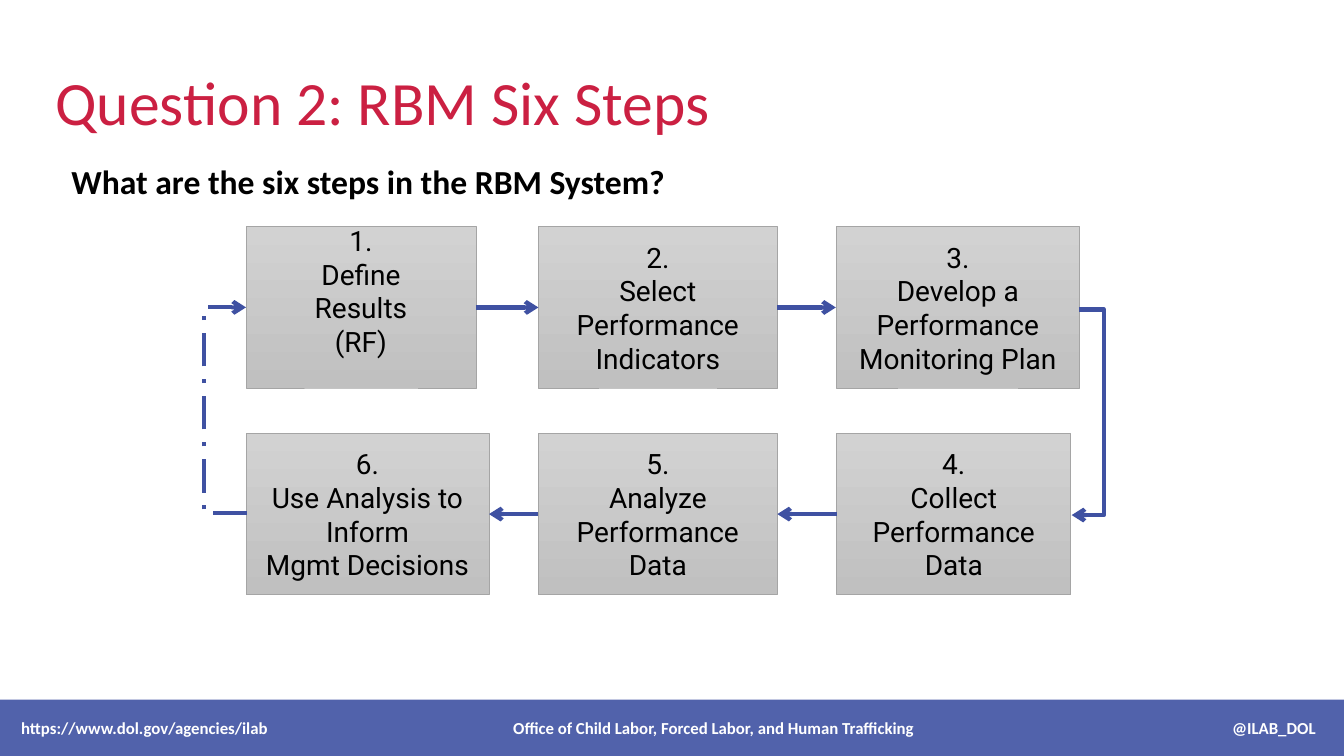
from lxml.etree import SubElement
from pptx import Presentation
from pptx.dml.color import RGBColor
from pptx.enum.dml import MSO_LINE_DASH_STYLE as Dash
from pptx.enum.shapes import MSO_CONNECTOR as Link, MSO_SHAPE as Preset
from pptx.enum.text import MSO_ANCHOR as Anchor, MSO_AUTO_SIZE as Fit, PP_ALIGN as Align
from pptx.oxml.ns import qn
from pptx.util import Inches, Pt

RED = RGBColor(0xCB, 0x20, 0x42)
BLUE = RGBColor(0x3F, 0x51, 0xA2)
BLACK = RGBColor(0, 0, 0)
WHITE = RGBColor(0xFF, 0xFF, 0xFF)
LIGHT_GRAY = RGBColor(0xD2, 0xD2, 0xD2)
DARK_GRAY = RGBColor(0xC0, 0xC0, 0xC0)
EDGE_GRAY = RGBColor(0xA5, 0xA5, 0xA5)

LEFT_SIDE, RIGHT_SIDE = 1, 3
TOP_ROW, BOTTOM_ROW, BOX_HEIGHT = 2.25, 4.3, 1.6

STEPS = [
    (2.44, TOP_ROW, 2.28, ["1.", "Define", "Results", "(RF)"]),
    (5.34, TOP_ROW, 2.37, ["2.", "Select", "Performance", "Indicators"]),
    (8.29, TOP_ROW, 2.42, ["3.", "Develop a", "Performance", "Monitoring Plan"]),
    (8.3, BOTTOM_ROW, 2.32, ["4.", "Collect", "Performance", "Data"]),
    (5.34, BOTTOM_ROW, 2.37, ["5.", "Analyze", "Performance", "Data"]),
    (2.44, BOTTOM_ROW, 2.41, ["6.", "Use Analysis to", "Inform", "Mgmt Decisions"]),
]


class StepSlide:
    styles = {
        "title": {"name": "Calibri", "size": Pt(44), "bold": False},
        "question": {"name": "Calibri", "size": Pt(24), "bold": True},
        "step": {"name": "Roboto", "size": Pt(20), "bold": False},
        "footer": {"name": "Calibri", "size": Pt(12), "bold": True},
    }
    colors = {"title": RED, "question": BLACK, "step": BLACK, "footer": WHITE}

    def __init__(self, deck):
        self.page = deck.slides.add_slide(deck.slide_layouts[5])

    def add_lines(self, shape, lines, style, align=Align.LEFT, **frame_format):
        frame = shape.text_frame
        frame_format = {"auto_size": Fit.NONE, "vertical_anchor": Anchor.MIDDLE,
                        "word_wrap": False} | frame_format
        for key, value in frame_format.items():
            setattr(frame, key, value)
        for index, line in enumerate(lines):
            para = frame.add_paragraph() if index else frame.paragraphs[0]
            para.alignment = align
            span = para.add_run()
            span.text = line
            for key, value in self.styles[style].items():
                setattr(span.font, key, value)
            span.font.color.rgb = self.colors[style]
        return frame

    def title(self, text, *place):
        shape = self.page.shapes.title
        for key, value in zip(("left", "top", "width", "height"), place):
            setattr(shape, key, Inches(value))
        frame = self.add_lines(shape, [text], "title", word_wrap=True)
        frame.paragraphs[0].line_spacing = 0.9

    def question(self, text, *place):
        box = self.page.shapes.add_textbox(*map(Inches, place))
        self.add_lines(box, [text], "question", vertical_anchor=Anchor.TOP)

    def rectangle(self, *place):
        box = self.page.shapes.add_shape(Preset.RECTANGLE, *map(Inches, place))
        box.shadow.inherit = False
        return box

    def footer(self, parts, tabs, *place):
        bar = self.rectangle(*place)
        bar.fill.solid()
        bar.fill.fore_color.rgb = BLUE
        color = bar._element.spPr.find(qn("a:solidFill"))[0]
        SubElement(color, qn("a:alpha"), val="90000")
        bar.line.fill.background()
        frame = self.add_lines(bar, ["\t".join(parts)], "footer",
                               margin_left=Inches(0.21), word_wrap=True)
        stops = SubElement(frame.paragraphs[0]._p.get_or_add_pPr(), qn("a:tabLst"))
        for position, align in tabs:
            SubElement(stops, qn("a:tab"), pos=str(Inches(position)), algn=align)

    def step(self, left, top, width, lines, bottom_inset=0.05):
        box = self.rectangle(left, top, width, BOX_HEIGHT)
        box.fill.gradient()
        box.fill.gradient_angle = 270
        for stop, color in zip(box.fill.gradient_stops, (LIGHT_GRAY, DARK_GRAY)):
            stop.color.rgb = color
        box.line.color.rgb = EDGE_GRAY
        box.line.width = Pt(0.5)
        self.add_lines(box, lines, "step", Align.CENTER, margin_bottom=Inches(bottom_inset))
        return box

    def connector(self, kind, start, end, dash=None):
        link = self.page.shapes.add_connector(kind, *map(Inches, start + end))
        link.line.color.rgb = BLUE
        link.line.width = Pt(3)
        if dash:
            link.line.dash_style = dash
        SubElement(link._element.spPr.find(qn("a:ln")), qn("a:tailEnd"), type="arrow")
        SubElement(link._element.spPr, qn("a:effectLst"))
        return link

    def arrow(self, source, target, from_side, to_side):
        link = self.connector(Link.STRAIGHT, (0, 0), (1, 1))
        link.begin_connect(source, from_side)
        link.end_connect(target, to_side)

    def elbow(self, start, end, turn, dash=None):
        link = self.connector(Link.ELBOW, start, end, dash)
        bend = round((turn - start[0]) / (end[0] - start[0]) * 100000)
        guides = link._element.spPr.find(qn("a:prstGeom")).get_or_add_avLst()
        SubElement(guides, qn("a:gd"), name="adj1", fmla=f"val {bend}")


def main():
    deck = Presentation()
    deck.slide_width, deck.slide_height = Inches(13.33), Inches(7.5)
    slide = StepSlide(deck)
    slide.footer(
        ["https://www.dol.gov/agencies/ilab",
         "Office of Child Labor, Forced Labor, and Human Trafficking",
         "@ILAB_DOL"],
        [(6.87, "ctr"), (12.84, "r")], 0, 6.94, 13.33, 0.56)
    slide.title("Question 2: RBM Six Steps", 0.45, 0.32, 11.56, 1.45)
    slide.question("What are the six steps in the RBM System?", 0.61, 1.55, 6.23, 0.5)

    first, *others = STEPS
    boxes = [slide.step(*first, bottom_inset=0.38)]
    boxes += [slide.step(*step) for step in others]
    top_boxes, bottom_boxes = boxes[:3], boxes[3:]
    for row, sides in ((top_boxes, (RIGHT_SIDE, LEFT_SIDE)),
                       (bottom_boxes, (LEFT_SIDE, RIGHT_SIDE))):
        for source, target in zip(row, row[1:]):
            slide.arrow(source, target, *sides)
    slide.elbow((10.7, 3.07), (10.63, 5.11), 10.95)
    slide.elbow((2.45, 5.09), (2.44, 3.05), 2.02, Dash.LONG_DASH_DOT)
    deck.save("out.pptx")


if __name__ == "__main__":
    main()
